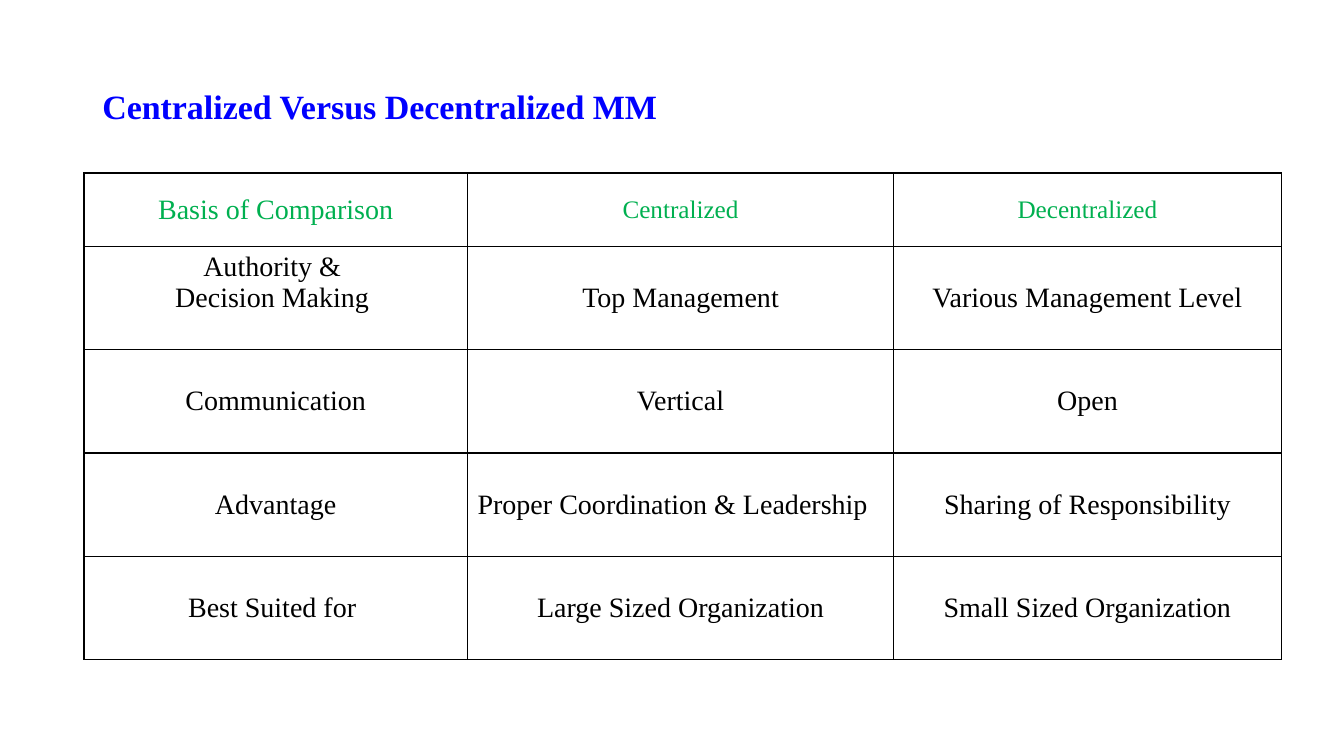
from dataclasses import dataclass
from lxml.etree import SubElement
from pptx import Presentation
from pptx.dml.color import RGBColor as Color
from pptx.enum.text import MSO_ANCHOR as Anchor, PP_ALIGN as Align
from pptx.oxml.ns import qn
from pptx.util import Pt


@dataclass(frozen=True)
class Theme:
    font: str = "Times New Roman"
    title: Color = Color(0x00, 0x00, 0xFF)
    heading: Color = Color(0x00, 0xB0, 0x50)
    body: Color = Color(0x00, 0x00, 0x00)
    paper: Color = Color(0xFF, 0xFF, 0xFF)
    title_size: float = 24.3
    body_size: float = 20
    heading_size: float = 18
    border: float = 1


THEME = Theme()
COLUMNS = (273.9, 304.5, 276.8)
ROWS = (52.4, 73.8, 73.8, 73.8, 73.8)
COMPARISON = (
    ("Basis of Comparison", "Centralized", "Decentralized"),
    ("Authority & \nDecision Making ", "Top Management", "Various Management Level"),
    ("Communication", "Vertical", "Open"),
    ("Advantage", "Proper Coordination & Leadership", "Sharing of Responsibility"),
    ("Best Suited for ", "Large Sized Organization", "Small Sized Organization"),
)


def style_para(para, size, color, align, bold=False):
    para.alignment = align
    para.font.name = THEME.font
    para.font.size = Pt(size)
    para.font.bold = bold
    para.font.color.rgb = color


def add_borders(cell):
    properties = cell._tc.get_or_add_tcPr()
    for index, side in enumerate(("lnL", "lnR", "lnT", "lnB")):
        line = properties.makeelement(qn(f"a:{side}"), {"w": str(Pt(THEME.border))})
        fill = SubElement(line, qn("a:solidFill"))
        SubElement(fill, qn("a:srgbClr"), val=str(THEME.body))
        properties.insert(index, line)


def add_title(page, text, left, top, width, height):
    box = page.shapes.add_textbox(Pt(left), Pt(top), Pt(width), Pt(height))
    frame = box.text_frame
    frame.word_wrap = True
    frame.vertical_anchor = Anchor.MIDDLE
    frame.margin_bottom = Pt(10.6)
    frame.text = text
    para = frame.paragraphs[0]
    para.line_spacing = 0.9
    style_para(para, THEME.title_size, THEME.title, Align.LEFT, bold=True)


def add_comparison(page, left, top):
    table = page.shapes.add_table(
        len(ROWS), len(COLUMNS), Pt(left), Pt(top), Pt(sum(COLUMNS)), Pt(sum(ROWS))
    ).table
    for column, width in zip(table.columns, COLUMNS):
        column.width = Pt(width)
    for row, height in zip(table.rows, ROWS):
        row.height = Pt(height)
    for row_index, texts in enumerate(COMPARISON):
        for column_index, text in enumerate(texts):
            cell = table.cell(row_index, column_index)
            cell.fill.solid()
            cell.fill.fore_color.rgb = THEME.paper
            cell.text = text
            cell.vertical_anchor = Anchor.TOP if "\n" in text else Anchor.MIDDLE
            add_borders(cell)
            is_heading = row_index == 0
            color = THEME.heading if is_heading else THEME.body
            size = THEME.heading_size if is_heading and column_index else THEME.body_size
            align = Align.LEFT if text.startswith("Proper") else Align.CENTER
            for para in cell.text_frame.paragraphs:
                style_para(para, size, color, align)


def main():
    deck = Presentation()
    deck.slide_width, deck.slide_height = Pt(960), Pt(540)
    page = deck.slides.add_slide(deck.slide_layouts[6])
    add_title(page, "Centralized Versus Decentralized MM", 66, 28.8, 828, 104.4)
    add_comparison(page, 60, 123.6)
    deck.save("out.pptx")


if __name__ == "__main__":
    main()
